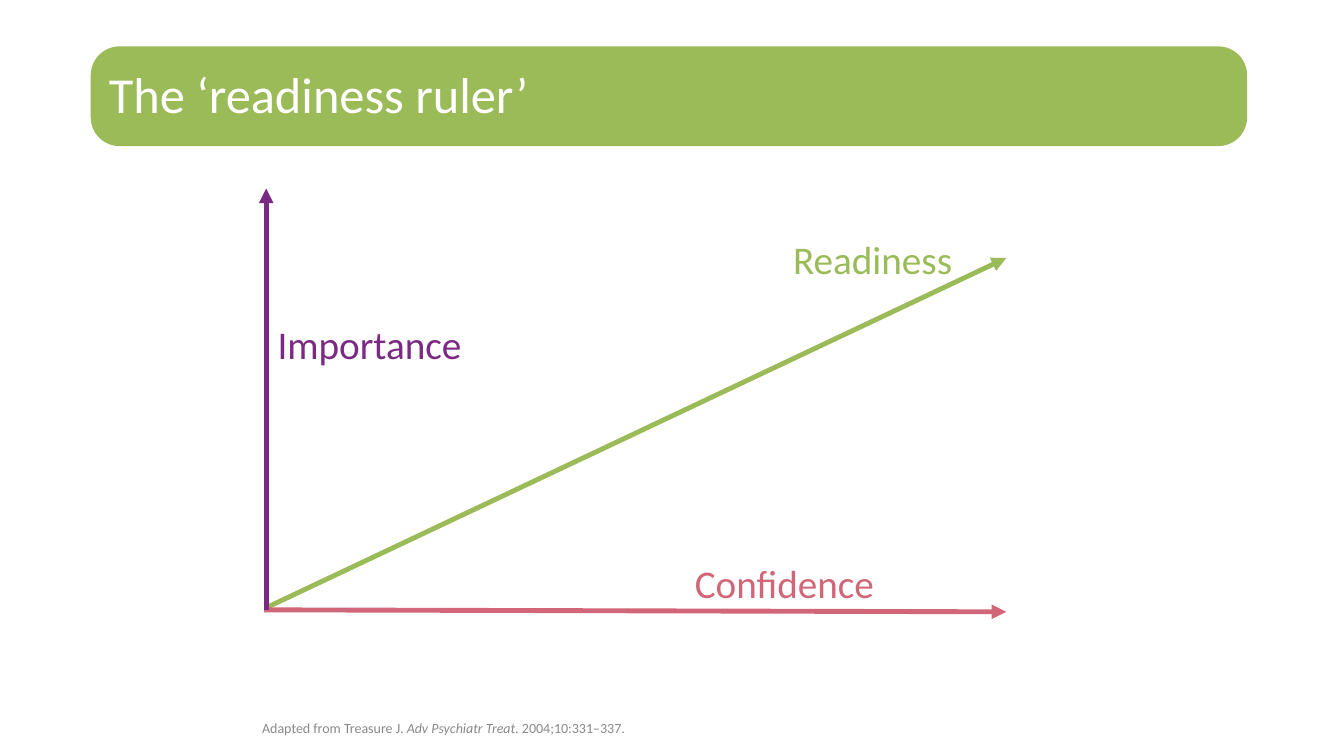
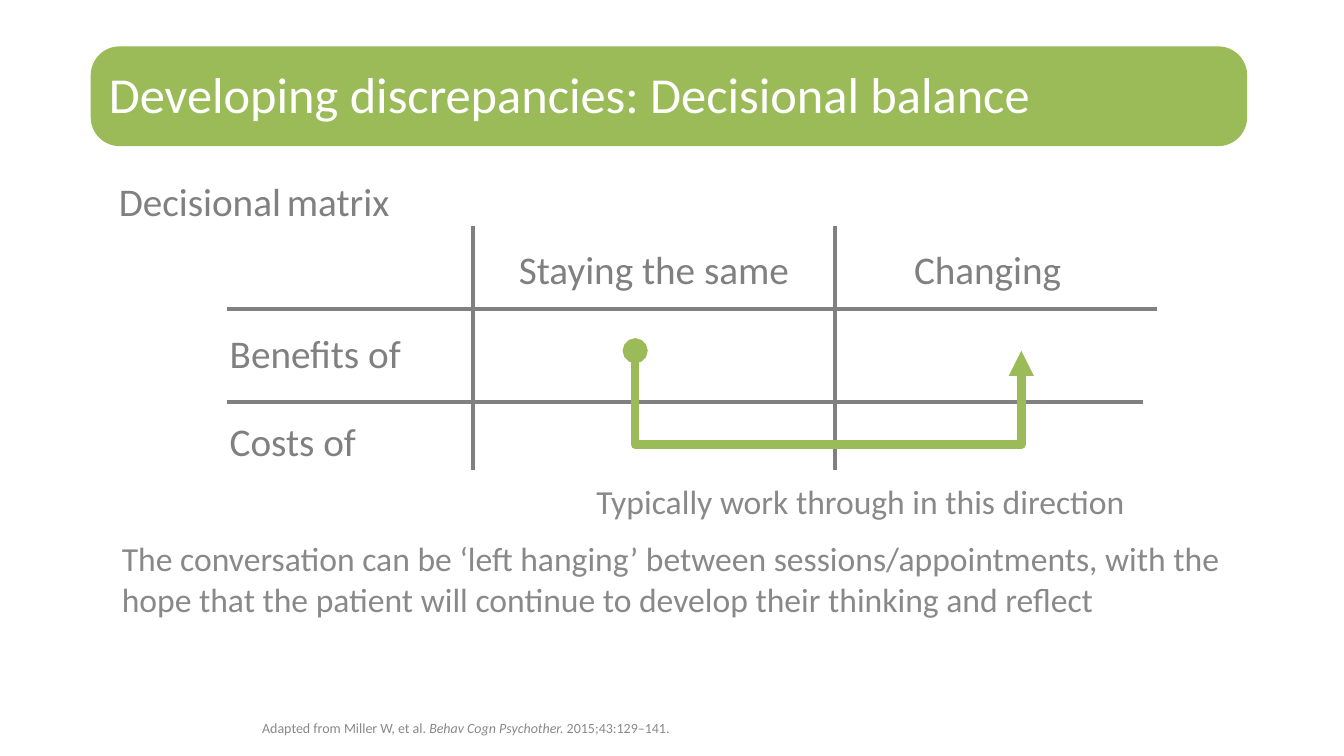
from pptx import Presentation
from pptx.dml.color import RGBColor
from pptx.enum.shapes import MSO_CONNECTOR, MSO_SHAPE
from pptx.enum.text import MSO_ANCHOR, MSO_AUTO_SIZE, PP_ALIGN
from pptx.util import Pt
from lxml.etree import SubElement
from pptx.oxml.ns import qn

SCALE = 9144
GREEN, ROSE, PLUM = "9BBB59", "D16678", "7B2A84"
GREY, PALE, WHITE, BLACK = "808080", "898989", "FFFFFF", "000000"
LEFT, MID = PP_ALIGN.LEFT, PP_ALIGN.CENTER


def px(*nums):
    return [n * SCALE for n in nums]


def tint(code):
    return RGBColor.from_string(code)


def apply(item, style):
    for name, value in style.items():
        setattr(item, name, value)


class Deck:
    font = "Calibri"
    margins = ("margin_left", "margin_top", "margin_right", "margin_bottom")

    def __init__(self):
        self.file = Presentation()
        self.file.slide_width, self.file.slide_height = px(1333, 750)
        self.layout = self.file.slide_layouts[1]
        self.slide = None

    def page(self, title, source):
        self.slide = self.file.slides.add_slide(self.layout)
        head, note = self.slide.placeholders
        self.holder(head, (108, 62, 1118, 72), MSO_ANCHOR.MIDDLE)
        self.words(head, [(title, {})], 36, WHITE, LEFT, 0.8)
        self.holder(note, (260, 646, 982, 85), MSO_ANCHOR.BOTTOM)
        props = note.text_frame.paragraphs[0]._p.get_or_add_pPr()
        props.set("marL", "0")
        props.set("indent", "0")
        SubElement(props, qn("a:buNone"))
        self.words(note, source, 10, PALE, LEFT, 0.9)

    def holder(self, shape, box, anchor):
        apply(shape, dict(zip(("left", "top", "width", "height"), px(*box))))
        apply(shape.text_frame, {
            "word_wrap": True, "auto_size": MSO_AUTO_SIZE.NONE,
            "vertical_anchor": anchor, **dict.fromkeys(self.margins, 0)})

    def band(self):
        bar = self.slide.shapes.add_shape(
            MSO_SHAPE.ROUNDED_RECTANGLE, *px(90, 46, 1147, 99))
        bar.adjustments[0] = 0.29
        bar.shadow.inherit = False
        bar.fill.solid()
        bar.fill.fore_color.rgb = tint(GREEN)
        bar.line.fill.background()
        self.layout.shapes._spTree.insert(2, bar._element)

    def words(self, shape, runs, size, color, align, space=1.0):
        para = shape.text_frame.paragraphs[0]
        apply(para, {"alignment": align, "line_spacing": space,
                     "space_before": Pt(0)})
        for text, style in runs:
            run = para.add_run()
            run.text = text
            look = {"name": self.font, "size": Pt(size), **style}
            shade = look.pop("color", color)
            apply(run.font, look)
            run.font.color.rgb = tint(shade)

    def label(self, text, box, size=28, color=GREY, align=MID):
        shape = self.slide.shapes.add_textbox(*px(*box))
        apply(shape.text_frame, {
            "word_wrap": True, "auto_size": MSO_AUTO_SIZE.SHAPE_TO_FIT_TEXT})
        runs = [(text, {})] if isinstance(text, str) else text
        self.words(shape, runs, size, color, align)

    def stroke(self, line, color, width, ends):
        line.color.rgb = tint(color)
        line.width = Pt(width)
        for tag, kind in ends.items():
            SubElement(line._get_or_add_ln(), qn("a:" + tag), type=kind)

    def line(self, start, end, color=GREY, width=2.75, **ends):
        rule = self.slide.shapes.add_connector(
            MSO_CONNECTOR.STRAIGHT, *px(*start, *end))
        self.stroke(rule.line, color, width, ends)
        SubElement(rule._element.spPr, qn("a:effectLst"))

    def route(self, points, color, width, **ends):
        first, *rest = [px(*point) for point in points]
        pen = self.slide.shapes.build_freeform(*first)
        pen.add_line_segments(rest, close=False)
        shape = pen.convert_to_shape()
        shape.fill.background()
        self.stroke(shape.line, color, width, ends)
        shape.shadow.inherit = False


def ruler(deck):
    deck.page("The ‘readiness ruler’", [
        ("Adapted from Treasure J. ", {}),
        ("Adv Psychiatr Treat.", {"italic": True}),
        (" 2004;10:331–337.", {})])
    deck.band()
    for start, end, color in (
            ((266, 602), (998, 256), GREEN),
            ((262, 605), (998, 607), ROSE),
            ((264, 605), (264, 187), PLUM)):
        deck.line(start, end, color, 3.5, tailEnd="triangle")
    for text, left, top, width, color in (
            ("Importance", 256, 313, 221, PLUM),
            ("Confidence", 657, 550, 242, ROSE),
            ("Readiness", 755, 229, 221, GREEN)):
        deck.label(text, (left, top, width, 57), color=color)


def matrix(deck):
    deck.page("Developing discrepancies: Decisional balance", [
        ("Adapted from Miller W, et al. ", {}),
        ("Behav Cogn Psychother. ", {"italic": True}),
        ("2015;43:129–141.", {})])
    for text, left, top, align in (
            ("Staying the same", 494, 238, MID),
            ("Changing", 825, 238, MID),
            ("Benefits of", 218, 322, LEFT),
            ("Costs of", 218, 409, LEFT)):
        deck.label(text, (left, top, 309, 57), align=align)
    for x in (469, 828):
        deck.line((x, 224), (x, 466))
    for y, right in ((307, 1148), (399, 1134)):
        deck.line((225, y), (right, y))
    deck.label("Typically work through in this direction",
               (570, 472, 567, 50), 24, PALE)
    deck.label([("Decisional", {}), (" ", {"size": Pt(18), "color": BLACK}),
                ("matrix", {})], (108, 171, 667, 57), align=LEFT)
    deck.route([(630, 348), (630, 441), (1013, 441), (1013, 348)],
               GREEN, 6, headEnd="oval", tailEnd="triangle")
    deck.label("The conversation can be ‘left hanging’ between "
               "sessions/appointments, with the hope that the patient will "
               "continue to develop their thinking and reflect",
               (111, 529, 1115, 91), 24, PALE, LEFT)


def main():
    deck = Deck()
    ruler(deck)
    matrix(deck)
    deck.file.save("out.pptx")


if __name__ == "__main__":
    main()
